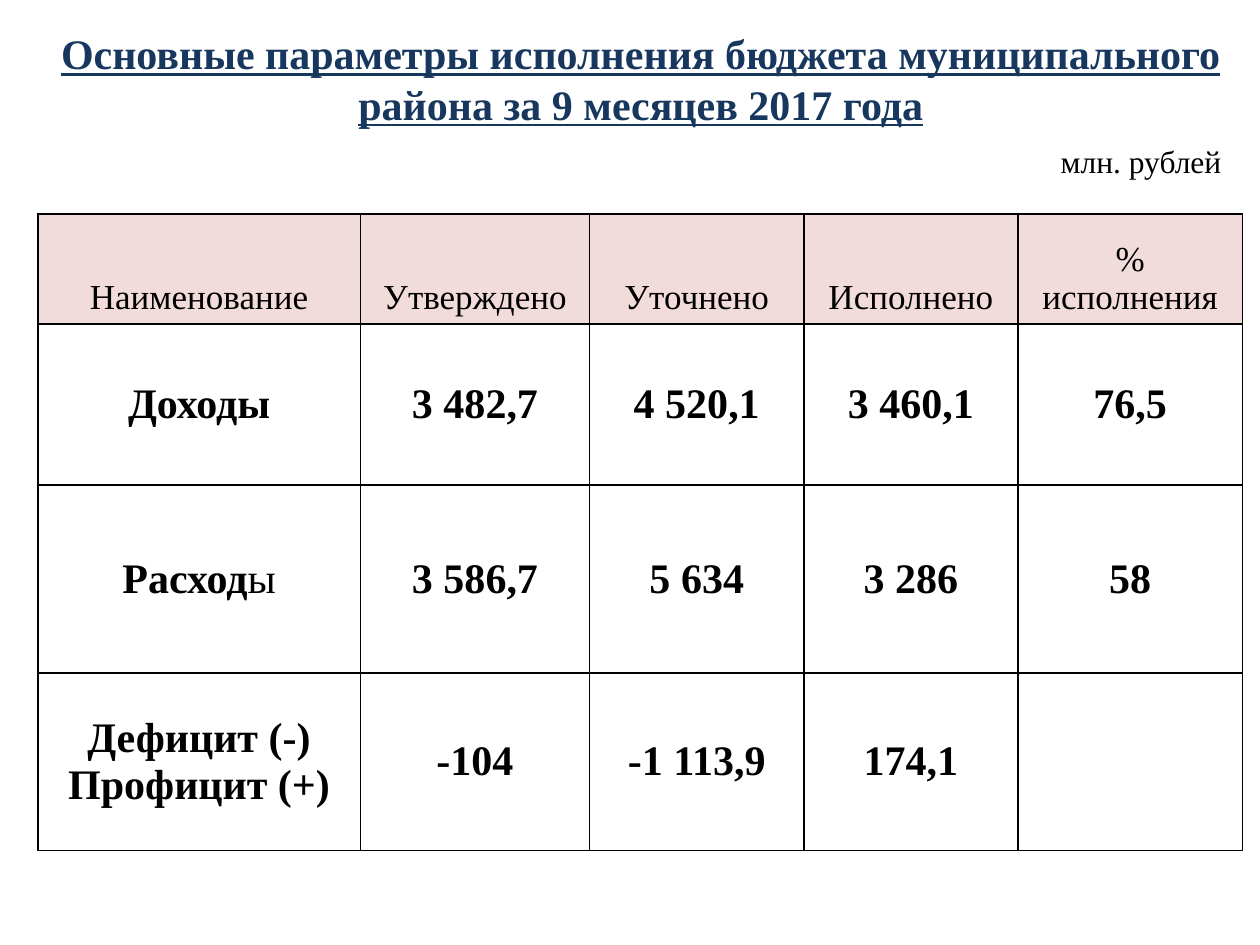
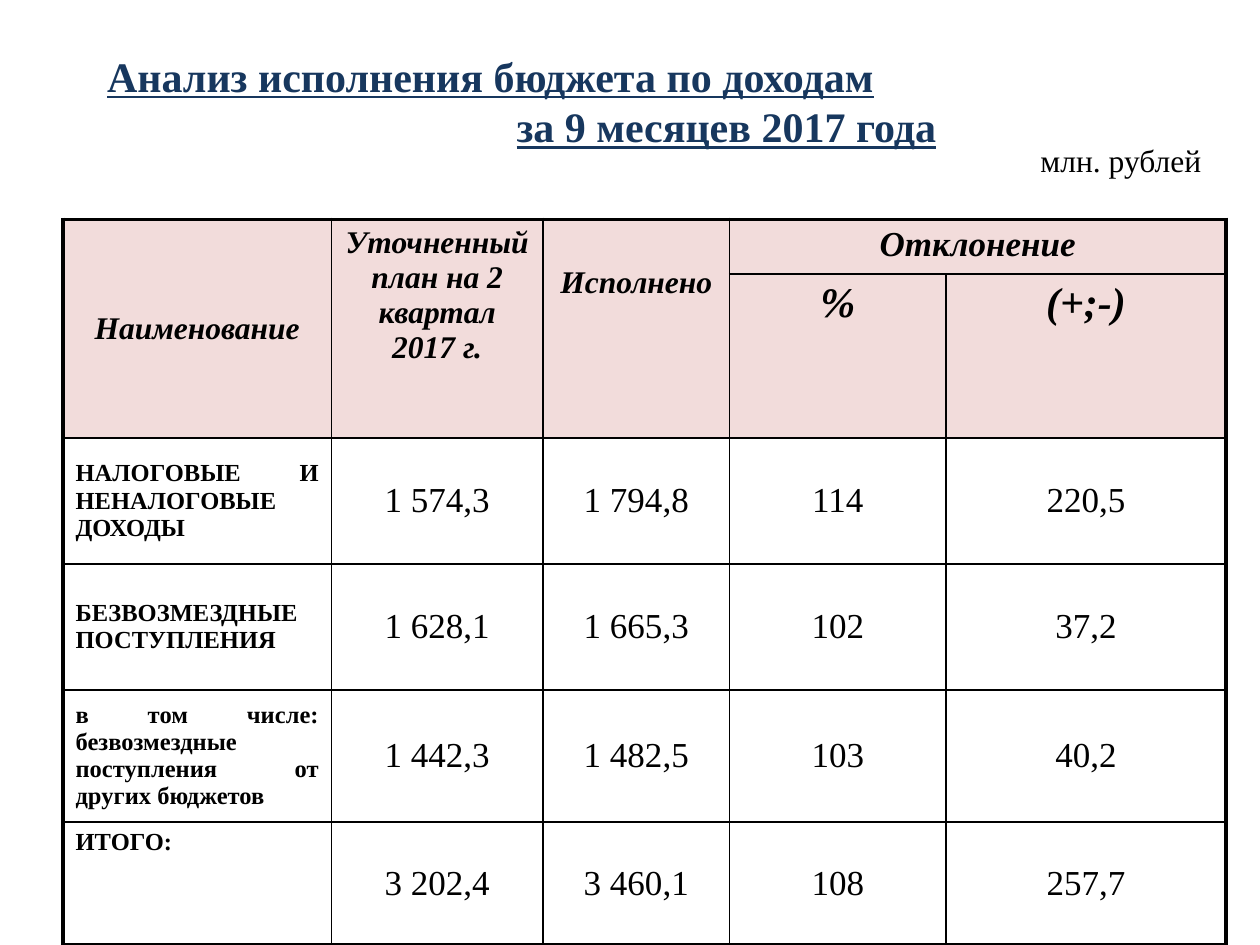
from lxml import etree
from pptx import Presentation
from pptx.dml.color import RGBColor
from pptx.enum.text import MSO_ANCHOR, MSO_AUTO_SIZE, PP_ALIGN
from pptx.oxml.ns import qn
from pptx.util import Inches, Pt

LEFT, CENTER, JUSTIFY = PP_ALIGN.LEFT, PP_ALIGN.CENTER, PP_ALIGN.JUSTIFY
TOP, MIDDLE, BOTTOM = MSO_ANCHOR.TOP, MSO_ANCHOR.MIDDLE, MSO_ANCHOR.BOTTOM
NO_AUTOFIT = MSO_AUTO_SIZE.NONE

FONT = "Times New Roman"
NAVY, BLACK, PINK = "17375E", "000000", "F2DCDB"
COLUMNS, ROWS = 100, 75  # slide grid
THIN, THICK = 1, 2.25


def rgb(color):
    return RGBColor.from_string(color)


class Deck:
    """Shared style, the slide grid and the current slide."""

    def __init__(self):
        self.prs = Presentation()
        self.prs.slide_width, self.prs.slide_height = Inches(10), Inches(7.5)
        self.s = None

    def x(self, columns):
        return round(self.prs.slide_width * columns / COLUMNS)

    def y(self, rows):
        return round(self.prs.slide_height * rows / ROWS)

    def box(self, left, top, width, height):
        return self.x(left), self.y(top), self.x(width), self.y(height)

    def new_slide(self):
        self.s = self.prs.slides.add_slide(self.prs.slide_layouts[5])

    def run(self, p, text, size, color=BLACK, bold=False, italic=False, underline=False):
        """Add text to a paragraph; a newline becomes a line break."""
        for i, line in enumerate(text.split("\n")):
            if i:
                p.add_line_break()
            r = p.add_run()
            r.text = line
            font = r.font
            font.name, font.size, font.color.rgb = FONT, Pt(size), rgb(color)
            font.bold, font.italic, font.underline = bold, italic, underline

    def title(self, place, runs, align=CENTER, tabs=()):
        """Runs are (text, underlined) pairs; tabs are in grid columns."""
        sp = self.s.shapes.title
        sp.left, sp.top, sp.width, sp.height = self.box(*place)
        tf = sp.text_frame
        tf.word_wrap, tf.auto_size, tf.vertical_anchor = True, NO_AUTOFIT, TOP
        p = tf.paragraphs[0]
        p.alignment = align
        if tabs:
            stops = etree.SubElement(p._p.get_or_add_pPr(), qn("a:tabLst"))
            for tab in tabs:
                etree.SubElement(stops, qn("a:tab"), pos=str(self.x(tab)), algn="l")
        for text, underline in runs:
            self.run(p, text, 24, NAVY, bold=True, underline=underline)

    def unit_note(self, left, top):
        tf = self.s.shapes.add_textbox(*self.box(left, top, 15.4, 4)).text_frame
        tf.word_wrap = True
        self.run(tf.paragraphs[0], "млн. рублей", 18)

    def table(self, left, top, widths, heights, edge=THIN):
        place = self.box(left, top, sum(widths), sum(heights))
        table = self.s.shapes.add_table(len(heights), len(widths), *place).table
        table.first_row = table.horz_banding = False
        for column, width in zip(table.columns, widths):
            column.width = self.x(width)
        for row, height in zip(table.rows, heights):
            row.height = self.y(height)
        self.grid, self.edge = table, edge
        return table

    def borders(self, cell, row, col):
        """Thin inner lines, and the table's own edge width outside."""
        last_row = row + cell.span_height == len(self.grid.rows)
        last_col = col + cell.span_width == len(self.grid.columns)
        outer = {"L": col == 0, "R": last_col, "T": row == 0, "B": last_row}
        for side, is_outer in outer.items():
            width = Pt(self.edge if is_outer else THIN)
            ln = etree.SubElement(cell._tc.get_or_add_tcPr(), qn("a:ln" + side), w=str(width))
            fill = etree.SubElement(ln, qn("a:solidFill"))
            etree.SubElement(fill, qn("a:srgbClr"), val=BLACK)

    def cell(self, row, col, runs, fill=None, align=CENTER, anchor=MIDDLE, top=0.5, **style):
        """Fill one cell; runs is a text or a list of (text, bold) pairs."""
        cell = self.grid.cell(row, col)
        self.borders(cell, row, col)
        if fill:
            cell.fill.solid()
            cell.fill.fore_color.rgb = rgb(fill)
        else:
            cell.fill.background()
        cell.vertical_anchor, cell.margin_top = anchor, self.y(top)
        p = cell.text_frame.paragraphs[0]
        p.alignment = align
        if isinstance(runs, str):
            runs = [(runs, style.pop("bold", False))] if runs else []
        for text, bold in runs:
            self.run(p, text, bold=bold, **style)


def budget_parameters(deck):
    deck.new_slide()
    deck.title((3.4, 1.7, 94.9, 9.1), [
        ("Основные параметры исполнения бюджета муниципального района за 9 месяцев 2017 года", True)])
    deck.unit_note(83.2, 10.8)

    # Table: header, then totals
    deck.table(3, 17, [25.6, 18.2, 17, 17, 17.8], [8.7, 12.8, 14.9, 14.1])
    header = ["Наименование", "Утверждено", "Уточнено", "Исполнено", "%\nисполнения"]
    totals = [
        ["Доходы", "3 482,7", "4 520,1", "3 460,1", "76,5"],
        [[("Расход", True), ("ы", False)], "3 586,7", "5 634", "3 286", "58"],
        ["Дефицит (-)\nПрофицит (+)", "-104", "-1 113,9", "174,1", ""],
    ]
    for col, text in enumerate(header):
        deck.cell(0, col, text, PINK, anchor=BOTTOM, size=20)
    for row, values in enumerate(totals, 1):
        for col, value in enumerate(values):
            style = {"bold": True} if isinstance(value, str) else {}
            deck.cell(row, col, value, size=24, **style)


def income_analysis(deck):
    deck.new_slide()
    deck.title((7.5, 3.5, 89.8, 9.1), [
        ("Анализ исполнения бюджета по доходам\t\n", True),
        ("\t", False),
        ("\tза 9 месяцев 2017 года", True)], LEFT, tabs=(21.8, 32.5, 87.5))
    deck.unit_note(81.6, 10.7)

    # Table frame with merged header cells
    table = deck.table(5, 17.4, [21.3, 16.8, 14.8, 17.2, 22.2],
                       [4.3, 13, 10, 10, 10.5, 9.7], THICK)
    for col in range(3):
        table.cell(0, col).merge(table.cell(1, col))
    table.cell(0, 3).merge(table.cell(0, 4))

    # Header: row, column, text, size, anchor, top margin
    header = [
        (0, 0, "Наименование", 18, MIDDLE, 0.5),
        (0, 1, "Уточненный план на 2 квартал 2017 г.", 18, TOP, 0.5),
        (0, 2, "Исполнено", 18, TOP, 3.7),
        (0, 3, "Отклонение", 20, TOP, 0.5),
        (1, 3, "%", 24, TOP, 0.5),
        (1, 4, "(+;-)", 24, TOP, 0.5),
    ]
    for row, col, text, size, anchor, top in header:
        deck.cell(row, col, text, PINK, anchor=anchor, top=top,
                  size=size, bold=True, italic=True)

    # Income rows
    incomes = [
        ("НАЛОГОВЫЕ И НЕНАЛОГОВЫЕ ДОХОДЫ", "1 574,3", "1 794,8", "114", "220,5"),
        ("БЕЗВОЗМЕЗДНЫЕ ПОСТУПЛЕНИЯ", "1 628,1", "1 665,3", "102", "37,2"),
        ("в том числе:\nбезвозмездные поступления от других бюджетов",
         "1 442,3", "1 482,5", "103", "40,2"),
        ("ИТОГО:", "3 202,4", "3 460,1", "108", "257,7"),
    ]
    for row, (name, *values) in enumerate(incomes, 2):
        anchor = TOP if name == "ИТОГО:" else MIDDLE
        deck.cell(row, 0, name, align=JUSTIFY, anchor=anchor, size=14, bold=True)
        for col, value in enumerate(values, 1):
            deck.cell(row, col, value, size=20)


def main():
    deck = Deck()
    budget_parameters(deck)
    income_analysis(deck)
    deck.prs.save("out.pptx")


if __name__ == "__main__":
    main()
